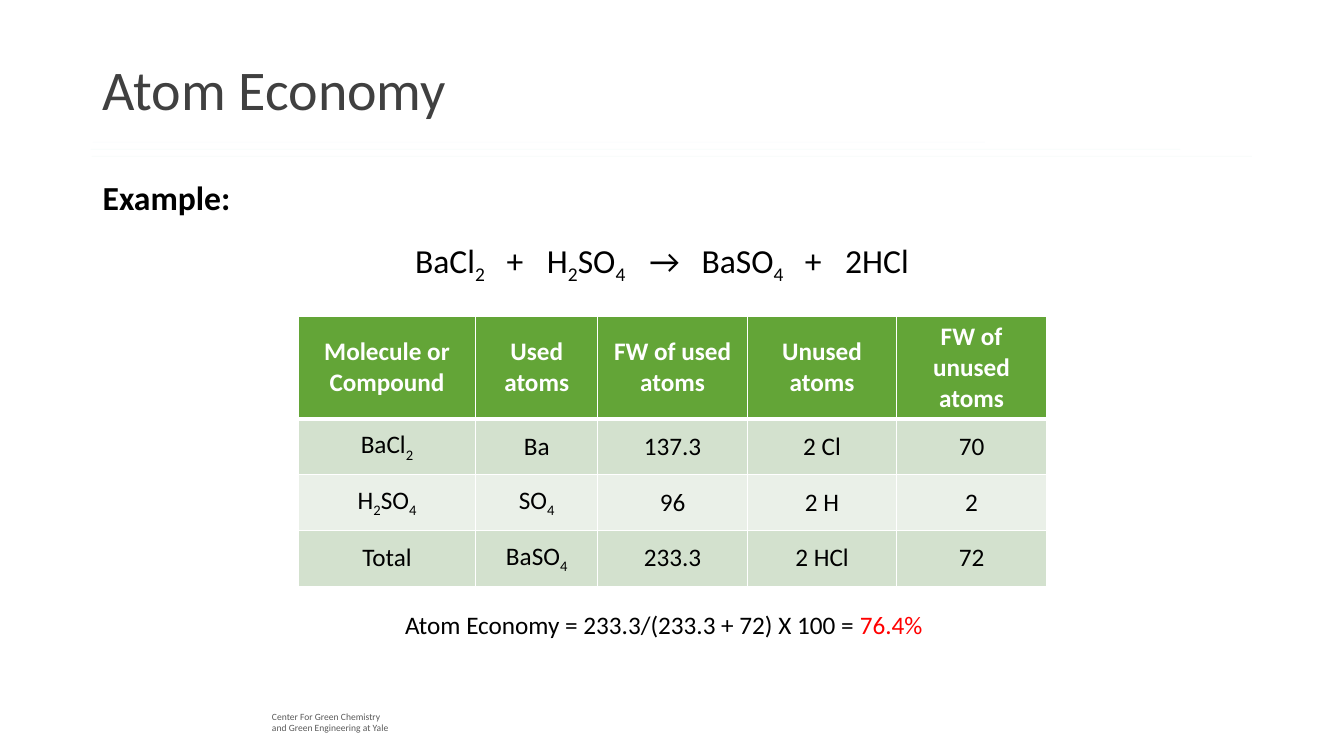
import dataclasses
import typing

import lxml.etree
import pptx
import pptx.dml.color
import pptx.enum.shapes
import pptx.enum.text
import pptx.oxml.ns
import pptx.util

RGBColor = pptx.dml.color.RGBColor
BLACK = RGBColor(0x00, 0x00, 0x00)
WHITE = RGBColor(0xFF, 0xFF, 0xFF)
RED = RGBColor(0xFF, 0x00, 0x00)
TITLE_GRAY = RGBColor(0x40, 0x40, 0x40)
FOOTER_GRAY = RGBColor(0x59, 0x59, 0x59)
HEADER_GREEN = RGBColor(0x63, 0xA5, 0x37)
BAND_DARK = RGBColor(0xD3, 0xE1, 0xCE)
BAND_LIGHT = RGBColor(0xEA, 0xF0, 0xE8)
RULE_BLUE = RGBColor(0x4E, 0xB3, 0xCF)
RULE_TEAL = RGBColor(0x44, 0xC1, 0xA3)
RULE_GREEN = RGBColor(0x37, 0xA7, 0x6F)

SLIDE_WIDTH = pptx.util.Inches(13.33)
SLIDE_HEIGHT = pptx.util.Inches(7.5)
GRID_COLUMNS = 160
GRID_ROWS = 90
FONT = "Calibri"
CENTER = pptx.enum.text.PP_ALIGN.CENTER
MIDDLE = pptx.enum.text.MSO_ANCHOR.MIDDLE
qn = pptx.oxml.ns.qn


@dataclasses.dataclass(frozen=True)
class Span:
    text: str
    size: float
    color: RGBColor = BLACK
    bold: bool = False


@dataclasses.dataclass(frozen=True)
class Label:
    column: float
    row: float
    columns: float
    rows: float
    lines: tuple[tuple[Span, ...], ...]
    tabs: tuple[float, ...] = ()


@dataclasses.dataclass(frozen=True)
class Rule:
    start: float
    end: float
    row: float
    color: RGBColor


RULES = (
    Rule(11.04, 117.24, 16.92, RULE_BLUE),
    Rule(10.8, 140.52, 17.76, RULE_TEAL),
    Rule(10.92, 149.04, 18.6, RULE_GREEN),
)
LABELS = (
    Label(31.2, 84, 22.3, 4, (
        (Span("Center For Green Chemistry", 6.8, FOOTER_GRAY),),
        (Span("and Green Engineering at Yale", 6.8, FOOTER_GRAY),),
    )),
    Label(11.04, 20.5, 17.8, 6, ((Span("Example:", 24, bold=True),),)),
    Label(47.04, 72, 65.9, 4.8, ((
        Span("Atom Economy = 233.3/(233.3 + 72) X 100 = ", 18),
        Span("76.4%", 18, RED),
    ),)),
    Label(48.24, 27.96, 63.4, 9.7,
          ((Span("BaCl_2\t+\tH_2SO_4\t→\tBaSO_4\t+\t2HCl", 24),),),
          (10.9, 15.7, 27.9, 34.1, 46.4, 51.2)),
)
TABLE_LEFT, TABLE_TOP = 35.52, 37.68
TABLE_COLUMNS = (21.1, 14.55, 17.8, 17.8, 17.8)
TABLE_ROWS = (11.76, 6.64, 6.64, 6.64)
TABLE_TEXT = (
    ("Molecule or Compound", "Used atoms", "FW of used atoms", "Unused atoms", "FW of unused atoms"),
    ("BaCl_2", "Ba", "137.3", "2 Cl", "70"),
    ("H_2SO_4", "SO_4", "96", "2 H", "2"),
    ("Total", "BaSO_4", "233.3", "2 HCl", "72"),
)


def across(columns: float) -> int:
    return round(SLIDE_WIDTH * columns / GRID_COLUMNS)


def down(rows: float) -> int:
    return round(SLIDE_HEIGHT * rows / GRID_ROWS)


def set_values(target: typing.Any, values: dict[str, typing.Any]) -> None:
    for name, value in values.items():
        setattr(target, name, value)


def add_piece(para: typing.Any, text: str, style: Span, baseline: int = 0) -> None:
    if not text:
        return
    span = para.add_run()
    span.text = text
    set_values(span.font, {"name": FONT, "size": pptx.util.Pt(style.size), "bold": style.bold})
    span.font.color.rgb = style.color
    if baseline:
        span._r.get_or_add_rPr().set("baseline", str(baseline))


def write_span(para: typing.Any, style: Span) -> None:
    first, *rest = style.text.split("_")
    add_piece(para, first, style)
    for part in rest:
        add_piece(para, part[0], style, -25000)
        add_piece(para, part[1:], style)


def add_tabs(para: typing.Any, tabs: tuple[float, ...]) -> None:
    stops = lxml.etree.SubElement(para._p.get_or_add_pPr(), qn("a:tabLst"))
    for tab in tabs:
        lxml.etree.SubElement(stops, qn("a:tab"), pos=str(across(tab)), algn="l")


def add_label(page: typing.Any, label: Label) -> None:
    box = page.shapes.add_textbox(
        across(label.column), down(label.row), across(label.columns), down(label.rows))
    frame = box.text_frame
    frame.word_wrap = bool(label.tabs)
    for index, line in enumerate(label.lines):
        para = frame.add_paragraph() if index else frame.paragraphs[0]
        if label.tabs:
            add_tabs(para, label.tabs)
        for style in line:
            write_span(para, style)


def add_rule(page: typing.Any, rule: Rule) -> None:
    line = page.shapes.add_connector(
        pptx.enum.shapes.MSO_CONNECTOR.STRAIGHT,
        across(rule.start), down(rule.row), across(rule.end), down(rule.row))
    line.line.width = pptx.util.Pt(0.5)
    line.line.color.rgb = rule.color
    color = line._element.spPr.find(".//" + qn("a:srgbClr"))
    lxml.etree.SubElement(color, qn("a:alpha"), val="3000")
    lxml.etree.SubElement(line._element.spPr, qn("a:effectLst"))


def add_borders(cell: typing.Any, widths: dict[str, float]) -> None:
    properties = cell._tc.get_or_add_tcPr()
    for side, width in widths.items():
        border = lxml.etree.SubElement(properties, qn("a:ln" + side), w=str(pptx.util.Pt(width)))
        fill = lxml.etree.SubElement(border, qn("a:solidFill"))
        lxml.etree.SubElement(fill, qn("a:srgbClr"), val=str(WHITE))


def add_atom_table(page: typing.Any) -> None:
    table = page.shapes.add_table(
        len(TABLE_ROWS), len(TABLE_COLUMNS), across(TABLE_LEFT), down(TABLE_TOP),
        across(sum(TABLE_COLUMNS)), down(sum(TABLE_ROWS))).table
    for column, columns in zip(table.columns, TABLE_COLUMNS):
        column.width = across(columns)
    for index, (row, rows, texts) in enumerate(zip(table.rows, TABLE_ROWS, TABLE_TEXT)):
        row.height = down(rows)
        header = index == 0
        fill = HEADER_GREEN if header else (BAND_LIGHT, BAND_DARK)[index % 2]
        widths = {"L": 1, "R": 1, "T": 3 if index == 1 else 1, "B": 3 if header else 1}
        for cell, text in zip(row.cells, texts):
            add_borders(cell, widths)
            cell.fill.solid()
            cell.fill.fore_color.rgb = fill
            cell.vertical_anchor = MIDDLE
            para = cell.text_frame.paragraphs[0]
            para.alignment = CENTER
            write_span(para, Span(text, 18, WHITE if header else BLACK, header))


def format_title(title: typing.Any) -> None:
    set_values(title, {"left": across(11.04), "top": down(2.28),
                       "width": across(138), "height": down(17.4)})
    set_values(title.text_frame, {"word_wrap": True, "vertical_anchor": MIDDLE})
    para = title.text_frame.paragraphs[0]
    set_values(para, {"alignment": pptx.enum.text.PP_ALIGN.LEFT, "line_spacing": 0.9})
    write_span(para, Span("Atom Economy", 40, TITLE_GRAY))


def main() -> None:
    deck = pptx.Presentation()
    set_values(deck, {"slide_width": SLIDE_WIDTH, "slide_height": SLIDE_HEIGHT})
    page = deck.slides.add_slide(deck.slide_layouts.get_by_name("Title Only"))
    format_title(page.shapes.title)
    for rule in RULES:
        add_rule(page, rule)
    add_atom_table(page)
    for label in LABELS:
        add_label(page, label)
    deck.save("out.pptx")


if __name__ == "__main__":
    main()
